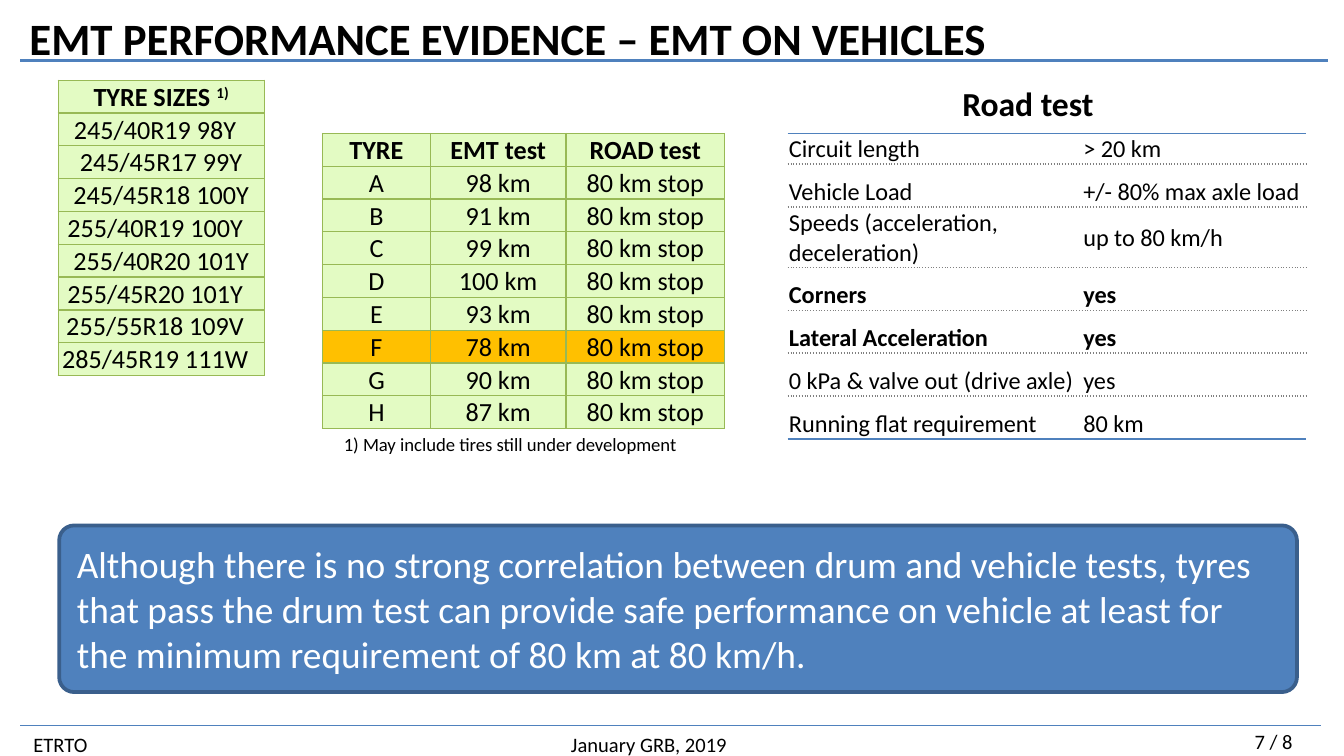
from dataclasses import dataclass

from lxml import etree
from pptx import Presentation
from pptx.dml.color import RGBColor
from pptx.enum.shapes import MSO_CONNECTOR, MSO_SHAPE
from pptx.enum.text import MSO_ANCHOR, PP_ALIGN
from pptx.oxml.ns import qn
from pptx.util import Pt

LEFT, CENTER = PP_ALIGN.LEFT, PP_ALIGN.CENTER
TOP, MIDDLE, BOTTOM = MSO_ANCHOR.TOP, MSO_ANCHOR.MIDDLE, MSO_ANCHOR.BOTTOM
STRAIGHT = MSO_CONNECTOR.STRAIGHT
ROUNDED = MSO_SHAPE.ROUNDED_RECTANGLE
TITLE_ONLY = 5


@dataclass(frozen=True)
class Theme:
    font: str = "Calibri"
    text: str = "000000"
    light: str = "FFFFFF"
    blue: str = "4F81BD"
    dark_blue: str = "3A5F8C"
    green: str = "E3FBC3"
    green_line: str = "98B955"
    highlight: str = "FFC000"
    grey: str = "808080"
    title_size: int = 24
    message_size: int = 20
    heading_size: int = 18
    table_size: int = 14
    road_size: int = 13
    footer_size: int = 11
    note_size: int = 10


THEME = Theme()
GREEN_BORDER = (THEME.green_line, 0.75, "solid")
BLUE_BORDER = (THEME.blue, 1, "solid")
DOTTED_BORDER = (THEME.grey, 1, "sysDot")
ROW_HEIGHT = 17.6
TRAILING_GAP = 6.4

TYRE_SIZES = [
    ("245/40R19 98Y", True),
    ("245/45R17 99Y", False),
    ("245/45R18 100Y", False),
    ("255/40R19 100Y", True),
    ("255/40R20 101Y", False),
    ("255/45R20 101Y", True),
    ("255/55R18 109V", True),
    ("285/45R19 111W", True),
]
EMT_DISTANCES = {"A": 98, "B": 91, "C": 99, "D": 100, "E": 93, "F": 78, "G": 90, "H": 87}
ROAD_TEST = [
    ("Circuit length", "> 20 km", 16.5),
    ("Vehicle Load", "+/- 80% max axle load", 23),
    ("Speeds (acceleration, deceleration)", "up to 80 km/h", 32.3),
    ("Corners", "yes", 23),
    ("Lateral Acceleration", "yes", 23),
    ("0 kPa & valve out (drive axle)", "yes", 23),
    ("Running flat requirement", "80 km", 23),
]
BOLD_ROAD_ROWS = ("Corners", "Lateral Acceleration")
MESSAGE = (
    "Although there is no strong correlation between drum and vehicle tests, "
    "tyres that pass the drum test can provide safe performance on vehicle at "
    "least for the minimum requirement of 80 km at 80 km/h."
)


def set_values(target, values):
    for name, value in values.items():
        setattr(target, name, value)


def add_run(paragraph, text, size, bold=False, color=THEME.text):
    run = paragraph.add_run()
    run.text = text
    set_values(run.font, {"name": THEME.font, "size": Pt(size), "bold": bold})
    run.font.color.rgb = RGBColor.from_string(color)
    return run


def write_text(frame, text, size, bold=False, color=THEME.text, align=LEFT, anchor=TOP):
    set_values(frame, {"word_wrap": True, "vertical_anchor": anchor})
    paragraph = frame.paragraphs[0]
    paragraph.alignment = align
    add_run(paragraph, text, size, bold, color)
    return paragraph


def add_text(slide, box, text, size, inset=None, **style):
    shape = slide.shapes.add_textbox(*map(Pt, box))
    if inset is not None:
        sides = ("left", "top", "right", "bottom")
        set_values(shape.text_frame, {f"margin_{side}": Pt(inset) for side in sides})
    return write_text(shape.text_frame, text, size, **style)


def add_title(slide, text):
    title = slide.shapes.title
    box = {"left": 8.6, "top": 2.2, "width": 702.7, "height": 36}
    set_values(title, {name: Pt(value) for name, value in box.items()})
    write_text(title.text_frame, text, THEME.title_size, bold=True)


def add_rule(slide, left, right, top, width):
    rule = slide.shapes.add_connector(STRAIGHT, Pt(left), Pt(top), Pt(right), Pt(top))
    rule.line.color.rgb = RGBColor.from_string(THEME.blue)
    rule.line.width = Pt(width)
    etree.SubElement(rule._element.spPr, qn("a:effectLst"))


def add_message(slide, box, text):
    shape = slide.shapes.add_shape(ROUNDED, *map(Pt, box))
    shape.shadow.inherit = False
    shape.adjustments[0] = 0.09
    shape.fill.solid()
    shape.fill.fore_color.rgb = RGBColor.from_string(THEME.blue)
    shape.line.color.rgb = RGBColor.from_string(THEME.dark_blue)
    shape.line.width = Pt(2)
    write_text(shape.text_frame, text, THEME.message_size, color=THEME.light, anchor=MIDDLE)


def add_table(slide, left, top, columns, heights):
    table = slide.shapes.add_table(
        len(heights), len(columns), Pt(left), Pt(top), Pt(sum(columns)), Pt(sum(heights))
    ).table
    set_values(table, {"first_row": False, "horz_banding": False})
    for column, width in zip(table.columns, columns):
        column.width = Pt(width)
    for row, height in zip(table.rows, heights):
        row.height = Pt(height)
    return table


def set_borders(cell, borders):
    properties = cell._tc.get_or_add_tcPr()
    for side in "LRTB":
        border = borders.get(side)
        line = etree.SubElement(properties, qn(f"a:ln{side}"))
        if border is None:
            etree.SubElement(line, qn("a:noFill"))
            continue
        color, width, dash = border
        line.set("w", str(Pt(width)))
        fill = etree.SubElement(line, qn("a:solidFill"))
        etree.SubElement(fill, qn("a:srgbClr"), val=color)
        etree.SubElement(line, qn("a:prstDash"), val=dash)


def format_cell(cell, text, size, borders, fill=None, gap=0, **style):
    margins = {"left": 0.7, "top": 0.7, "right": 0.7 + gap, "bottom": 0}
    set_values(cell, {f"margin_{side}": Pt(value) for side, value in margins.items()})
    set_borders(cell, borders)
    if fill:
        cell.fill.solid()
        cell.fill.fore_color.rgb = RGBColor.from_string(fill)
    else:
        cell.fill.background()
    anchor = style.pop("anchor", BOTTOM)
    paragraph = write_text(cell.text_frame, text, size, **style)
    cell.vertical_anchor = anchor
    return paragraph


def format_green_cell(cell, text, fill=THEME.green, **style):
    borders = dict.fromkeys("LRTB", GREEN_BORDER)
    return format_cell(cell, text, THEME.table_size, borders, fill, align=CENTER, **style)


def add_sizes_table(slide):
    table = add_table(slide, 31.2, 43, [110.3], [ROW_HEIGHT] * (len(TYRE_SIZES) + 1))
    heading = format_green_cell(table.cell(0, 0), "TYRE SIZES ", bold=True)
    mark = add_run(heading, "1)", THEME.table_size, bold=True)
    mark._r.get_or_add_rPr().set("baseline", "30000")
    for row, (size, shifted) in enumerate(TYRE_SIZES, 1):
        format_green_cell(table.cell(row, 0), size, gap=TRAILING_GAP if shifted else 0)


def add_results_table(slide):
    rows = [("TYRE", "EMT test", "ROAD test")]
    rows += [(tyre, f"{distance} km", "80 km stop") for tyre, distance in EMT_DISTANCES.items()]
    table = add_table(slide, 172.8, 71.5, [57.8, 72.6, 85], [ROW_HEIGHT] * len(rows))
    for row, values in enumerate(rows):
        fill = THEME.highlight if values[0] == "F" else THEME.green
        for column, text in enumerate(values):
            format_green_cell(table.cell(row, column), text, fill, bold=row == 0)


def add_road_table(slide):
    table = add_table(slide, 422, 71.5, [157.7, 120.2], [height for *_, height in ROAD_TEST])
    last = len(ROAD_TEST) - 1
    for row, (label, value, _) in enumerate(ROAD_TEST):
        borders = {
            "T": BLUE_BORDER if row == 0 else DOTTED_BORDER,
            "B": BLUE_BORDER if row == last else DOTTED_BORDER,
        }
        bold = label in BOLD_ROAD_ROWS
        value_anchor = MIDDLE if label.startswith("Speeds") else BOTTOM
        format_cell(table.cell(row, 0), label, THEME.road_size, borders, bold=bold)
        format_cell(table.cell(row, 1), value, THEME.road_size, borders, bold=bold, anchor=value_anchor)


def add_footer(slide):
    add_rule(slide, 10.8, 707.8, 388.8, 0.4)
    add_text(slide, (656, 392.4, 52.6, 9.4), "7 / 8", THEME.footer_size,
             inset=0, align=CENTER, anchor=MIDDLE)
    paragraph = add_text(slide, (10.8, 388.4, 389, 15), "ETRTO\tJanuary GRB, 2019", THEME.footer_size)
    tabs = etree.SubElement(paragraph._p.get_or_add_pPr(), qn("a:tabLst"))
    etree.SubElement(tabs, qn("a:tab"), pos=str(Pt(288)), algn="l")


def main():
    presentation = Presentation()
    set_values(presentation, {"slide_width": Pt(720), "slide_height": Pt(405)})
    slide = presentation.slides.add_slide(presentation.slide_layouts[TITLE_ONLY])
    add_footer(slide)
    add_rule(slide, 10.8, 711.4, 32.4, 1.5)
    add_title(slide, "EMT PERFORMANCE EVIDENCE – EMT ON VEHICLES")
    add_results_table(slide)
    add_road_table(slide)
    add_sizes_table(slide)
    add_text(slide, (177.1, 228.2, 211, 19.4), "1) May include tires still under development", THEME.note_size)
    add_message(slide, (31.7, 281.5, 663.1, 89.3), MESSAGE)
    add_text(slide, (424, 41, 253.4, 28.8), "Road test", THEME.heading_size, bold=True, align=CENTER)
    presentation.save("out.pptx")


if __name__ == "__main__":
    main()
